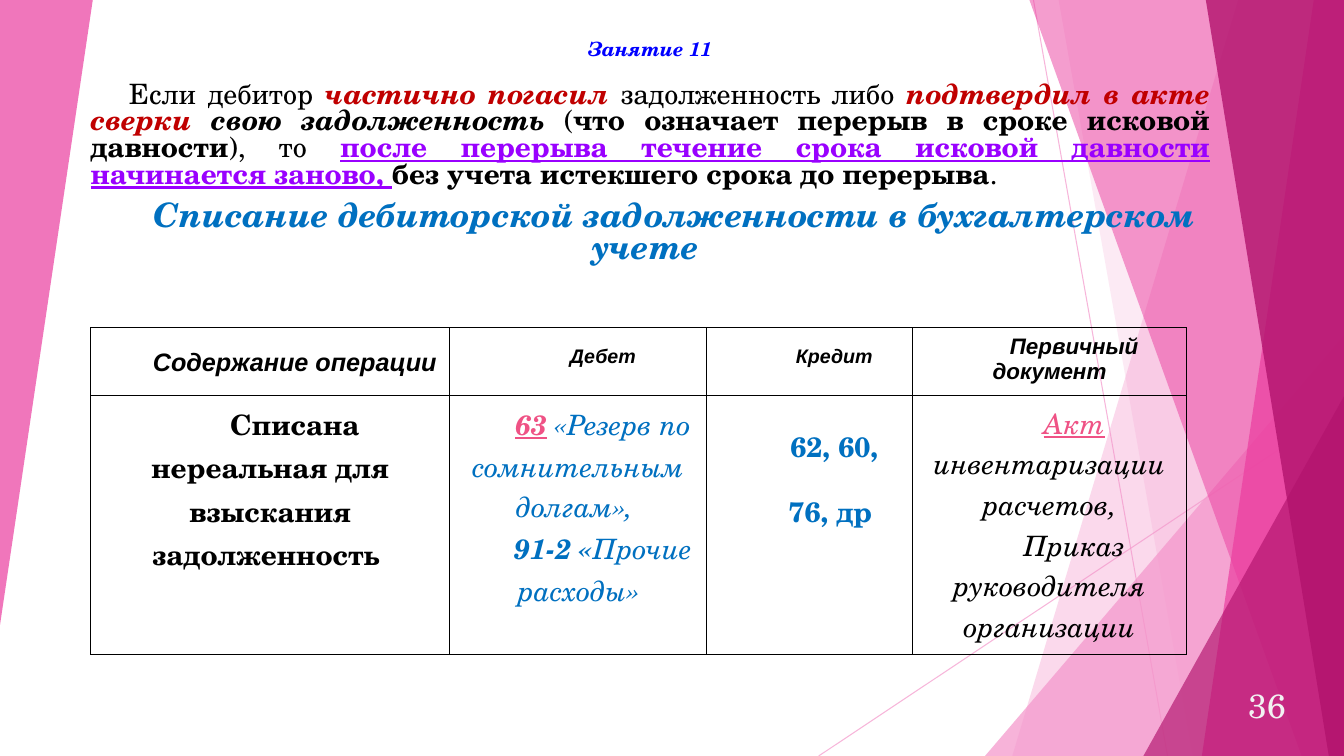
from dataclasses import dataclass

from lxml.etree import SubElement
from pptx import Presentation
from pptx.dml.color import RGBColor
from pptx.enum.shapes import MSO_CONNECTOR as Connector, MSO_SHAPE as Preset
from pptx.enum.text import MSO_ANCHOR as Anchor, PP_ALIGN as Align
from pptx.oxml.ns import qn
from pptx.util import Pt

SCALE = 9144
WIDTH, HEIGHT = 1333, 750


@dataclass(frozen=True)
class Theme:
    serif: str = "TeX Gyre Schola"
    sans: str = "Arial"
    black: str = "000000"
    white: str = "FFFFFF"
    pale: str = "F496CB"
    pink: str = "EB3D9F"
    plum: str = "B2136D"
    red: str = "C00000"
    violet: str = "9900FF"
    blue: str = "0070C0"
    lesson: str = "0000FF"
    link: str = "EF5285"
    number: str = "F2F2F2"
    small: int = 14
    medium: int = 16
    label: int = 18
    body: int = 20
    large: int = 24


THEME = Theme()


def px(value):
    return value * SCALE


def set_fill(fill, colour, opacity=100):
    fill.solid()
    fill.fore_color.rgb = RGBColor.from_string(colour)
    if opacity < 100:
        for node in fill._xPr.iter(qn("a:srgbClr")):
            SubElement(node, qn("a:alpha"), val=str(opacity * 1000))


def finish_facet(shape, colour, opacity):
    shape.shadow.inherit = False
    set_fill(shape.fill, colour, opacity)
    shape.line.fill.background()


def add_ray(page, start, end):
    ray = page.shapes.add_connector(Connector.STRAIGHT, *map(px, start + end))
    set_fill(ray.line.fill, THEME.pale, 70)
    ray.line.width = Pt(0.75)
    SubElement(ray._element.spPr, qn("a:effectLst"))


def add_band(page, box, top_x, bottom_x, colour, opacity):
    left, top, width, height = box
    right, bottom = left + width, top + height
    builder = page.shapes.build_freeform(left + top_x, top, scale=SCALE)
    builder.add_line_segments([(right, top), (right, bottom), (left + bottom_x, bottom)], close=True)
    finish_facet(builder.convert_to_shape(), colour, opacity)


def add_triangle(page, box, colour, opacity, rotation=0):
    triangle = page.shapes.add_shape(Preset.ISOSCELES_TRIANGLE, *map(px, box))
    triangle.adjustments[0] = 1
    triangle.rotation = rotation
    finish_facet(triangle, colour, opacity)


def add_backdrop(page, box):
    left, top, width, height = box
    right, bottom = left + width, top + height
    add_ray(page, (left + 1025, top), (left + 1158, bottom))
    add_ray(page, (right, top + 403), (left + 812, bottom))

    def band(top_x, bottom_x, colour, opacity):
        add_band(page, box, top_x, bottom_x, colour, opacity)

    def corner(wide, high, colour, opacity):
        add_triangle(page, (right - wide, bottom - high, wide, high), colour, opacity)

    band(1228, 1004, THEME.pale, 36)
    band(1050, 1183, THEME.pale, 20)
    corner(356, 417, THEME.pale, 72)
    band(1021, 1291, THEME.pink, 50)
    band(1303, 1192, THEME.pink, 70)
    band(1196, 1318, THEME.plum, 80)
    corner(199, 357, THEME.plum, 66)
    add_triangle(page, (left, top, 92, 620), THEME.pink, 70, 180)


def write_para(para, spans, size, font=THEME.serif, align=Align.CENTER, indent=0, spacing=None, before=0):
    para.alignment = align
    para.font.size = Pt(size)
    para.font.name = font
    para.space_before = Pt(before)
    if spacing:
        para.line_spacing = spacing
    properties = para._p.get_or_add_pPr()
    properties.set("marL", "0")
    properties.set("indent", str(px(indent)))
    for text, style, colour in spans:
        span = para.add_run()
        span.text = text
        span.font.bold = "b" in style
        span.font.italic = "i" in style
        span.font.underline = "u" in style
        span.font.color.rgb = RGBColor.from_string(colour)


def add_text(page, box, anchor=Anchor.TOP):
    frame = page.shapes.add_textbox(*map(px, box)).text_frame
    frame.word_wrap = True
    frame.vertical_anchor = anchor
    return frame


def add_lesson(page, box):
    frame = add_text(page, box, Anchor.MIDDLE)
    frame.margin_top = frame.margin_bottom = 0
    write_para(frame.paragraphs[0], [("Занятие 11", "bi", THEME.lesson)], THEME.small)


def add_statement(page, box):
    frame = add_text(page, box)
    write_para(frame.paragraphs[0], [
        ("Если дебитор ", "", THEME.black),
        ("частично погасил ", "bi", THEME.red),
        ("задолженность либо ", "", THEME.black),
        ("подтвердил в акте сверки ", "bi", THEME.red),
        ("свою задолженность", "bi", THEME.black),
        (" (", "", THEME.black),
        ("что означает перерыв в сроке исковой давности", "b", THEME.black),
        ("), то ", "", THEME.black),
        ("после перерыва течение срока исковой давности начинается заново, ", "bu", THEME.violet),
        ("без учета истекшего срока до перерыва", "b", THEME.black),
        (".", "", THEME.black),
    ], THEME.body, align=Align.JUSTIFY, indent=38, spacing=0.8)
    heading = "Списание дебиторской задолженности в бухгалтерском учете "
    write_para(frame.add_paragraph(), [(heading, "bi", THEME.blue)], THEME.large,
               indent=49, spacing=0.8, before=8)


def add_border(cell):
    properties = cell._tc.get_or_add_tcPr()
    for position, side in enumerate(("lnL", "lnR", "lnT", "lnB")):
        line = SubElement(properties, qn(f"a:{side}"), w=str(Pt(1)))
        SubElement(SubElement(line, qn("a:solidFill")), qn("a:srgbClr"), val=THEME.black)
        properties.remove(line)
        properties.insert(position, line)


def fill_cell(cell, paras, **options):
    cell.margin_left = cell.margin_right = px(4)
    cell.margin_top = cell.margin_bottom = px(7)
    cell.fill.background()
    add_border(cell)
    frame = cell.text_frame
    for index, spans in enumerate(paras):
        para = frame.add_paragraph() if index else frame.paragraphs[0]
        write_para(para, spans, indent=49, **options)


def add_entries(page, box):
    widths, heights = (356, 255, 204, 272), (63, 257)
    table = page.shapes.add_table(len(heights), len(widths), *map(px, box)).table
    table.first_row = table.horz_banding = False
    for column, width in zip(table.columns, widths):
        column.width = px(width)
    for row, height in zip(table.rows, heights):
        row.height = px(height)
    headers = [
        ("Содержание операции", THEME.label, 1.5),
        ("Дебет", THEME.small, 1.5),
        ("Кредит", THEME.small, 1.5),
        ("Первичный документ", THEME.medium, 1),
    ]
    for index, (text, size, spacing) in enumerate(headers):
        fill_cell(table.cell(0, index), [[(text, "bi", THEME.black)]],
                  size=size, font=THEME.sans, spacing=spacing)
    entries = [
        ([[("Списана нереальная для взыскания задолженность ", "b", THEME.black)]], 1),
        ([[("63", "biu", THEME.link), (" «Резерв по сомнительным долгам», ", "i", THEME.blue)],
          [("91-2 «", "bi", THEME.blue), ("Прочие расходы»", "i", THEME.blue)]], 1),
        ([[("62, 60,", "b", THEME.blue)], [("76, др ", "b", THEME.blue)]], 1.5),
        ([[("Акт", "iu", THEME.link), (" инвентаризации расчетов,", "i", THEME.black)],
          [("Приказ руководителя организации", "i", THEME.black)]], 1),
    ]
    for index, (paras, spacing) in enumerate(entries):
        fill_cell(table.cell(1, index), paras, size=THEME.body, spacing=spacing)


def add_page_number(page, box):
    frame = add_text(page, box, Anchor.MIDDLE)
    write_para(frame.paragraphs[0], [("36", "", THEME.number)], THEME.large, align=Align.RIGHT)


def main():
    deck = Presentation()
    deck.slide_width, deck.slide_height = px(WIDTH), px(HEIGHT)
    page = deck.slides.add_slide(deck.slide_layouts[6])
    set_fill(page.background.fill, THEME.white)
    add_backdrop(page, (0, 0, WIDTH, HEIGHT))
    add_statement(page, (80, 77, 1130, 240))
    add_page_number(page, (1210, 679, 75, 40))
    add_lesson(page, (90, 32, 1110, 32))
    add_entries(page, (90, 325, 1087, 320))
    deck.save("out.pptx")


if __name__ == "__main__":
    main()
